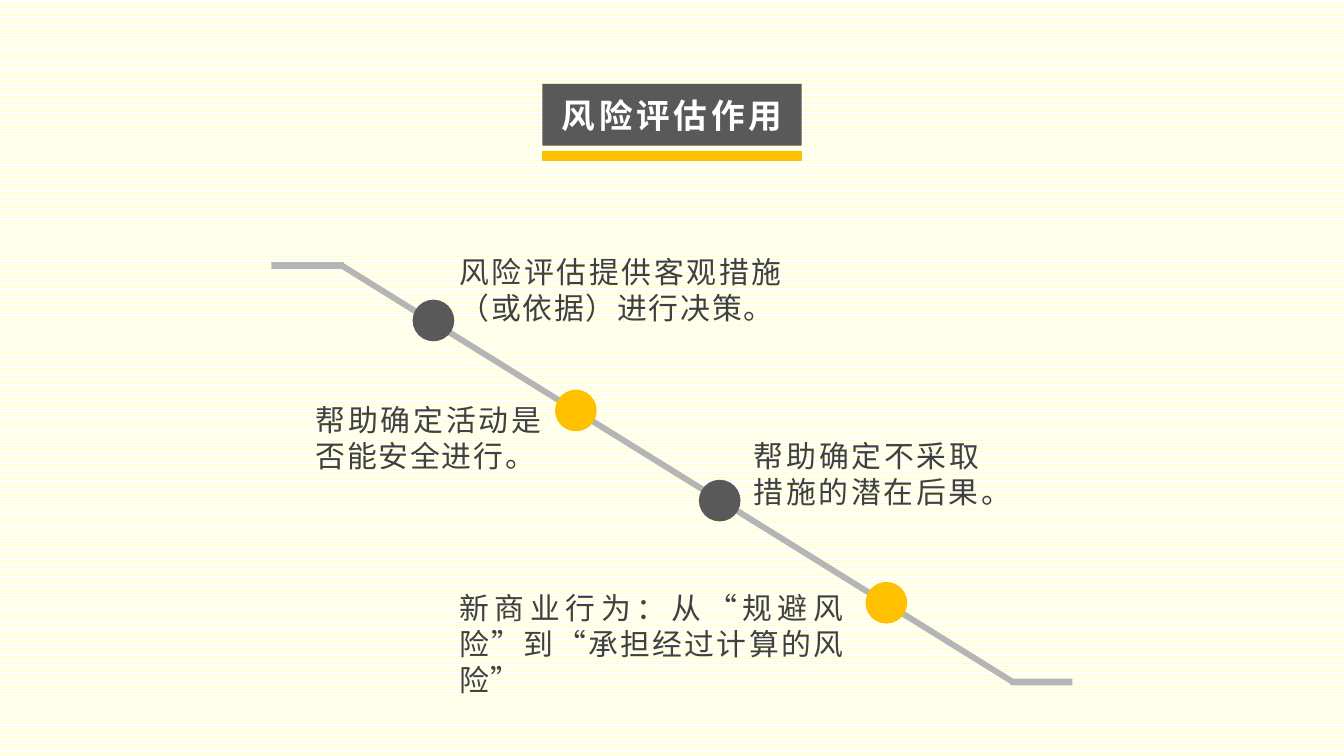
import pptx
import pptx.dml.color
import pptx.enum.dml
import pptx.enum.shapes
import pptx.enum.text
import pptx.oxml
import pptx.oxml.ns
import pptx.util

FONT = "Noto Sans CJK SC"
GREY, YELLOW, TRACK, INK, WHITE = "595959", "FFC000", "B5B5B6", "404040", "FFFFFF"
COLS, ROWS = 100, 56.25
DOT = 3.1
SHAPE = pptx.enum.shapes.MSO_SHAPE
ALIGN = pptx.enum.text.PP_ALIGN
ANCHOR = pptx.enum.text.MSO_ANCHOR


def rgb(value):
    return pptx.dml.color.RGBColor.from_string(value)


def write(tf, text, size=16, color=INK, bold=False, align=ALIGN.JUSTIFY, spacing=1):
    p = tf.paragraphs[0]
    p.alignment = align
    p.line_spacing = pptx.util.Pt(round(size * 1.2, 1))
    r = p.add_run()
    r.text = text
    r.font.size = pptx.util.Pt(size)
    r.font.bold = bold
    r.font.name = FONT
    r.font.color.rgb = rgb(color)
    rpr = r._r.get_or_add_rPr()
    rpr.set("spc", str(spacing * 100))
    ea = pptx.oxml.parse_xml(f'<a:ea {pptx.oxml.ns.nsdecls("a")} typeface="{FONT}"/>')
    rpr.find(pptx.oxml.ns.qn("a:latin")).addnext(ea)


class Deck:
    def __init__(self, width):
        self.prs = pptx.Presentation()
        self.prs.slide_width = pptx.util.Inches(width)
        self.prs.slide_height = pptx.util.Inches(width * 9 / 16)
        self.s = self.prs.slides.add_slide(self.prs.slide_layouts[6])

    def x(self, col):
        return round(self.prs.slide_width * col / COLS)

    def y(self, row):
        return round(self.prs.slide_height * row / ROWS)

    def box(self, col, row, cols, rows):
        return self.x(col), self.y(row), self.x(cols), self.y(rows)

    def background(self, fore, back):
        fill = self.s.background.fill
        fill.patterned()
        fill.pattern = pptx.enum.dml.MSO_PATTERN.LIGHT_HORIZONTAL
        fill.fore_color.rgb = rgb(fore)
        fill.back_color.rgb = rgb(back)

    def paint(self, sp, color):
        sp.shadow.inherit = False
        sp.fill.solid()
        sp.fill.fore_color.rgb = rgb(color)
        sp.line.fill.background()
        return sp

    def shape(self, kind, col, row, cols, rows, color):
        sp = self.s.shapes.add_shape(kind, *self.box(col, row, cols, rows))
        return self.paint(sp, color)

    def title(self, col, row, cols, rows, text):
        sp = self.shape(SHAPE.RECTANGLE, col, row, cols, rows, GREY)
        tf = sp.text_frame
        tf.word_wrap = False
        tf.vertical_anchor = ANCHOR.MIDDLE
        tf.margin_left = tf.margin_right = pptx.util.Inches(0.12)
        tf.margin_top = tf.margin_bottom = pptx.util.Inches(0.08)
        write(tf, text, size=18, color=WHITE, bold=True, align=ALIGN.CENTER, spacing=2)

    def rule(self, col, row, cols, color, width):
        sp = self.s.shapes.add_connector(
            pptx.enum.shapes.MSO_CONNECTOR.STRAIGHT,
            self.x(col), self.y(row), self.x(col + cols), self.y(row))
        sp.line.color.rgb = rgb(color)
        sp.line.width = pptx.util.Pt(width)
        effects = pptx.oxml.parse_xml(f'<a:effectLst {pptx.oxml.ns.nsdecls("a")}/>')
        sp._element.spPr.append(effects)

    def outline(self, points, color):
        start, *rest = [(self.x(col), self.y(row)) for col, row in points]
        builder = self.s.shapes.build_freeform(*start)
        builder.add_line_segments(rest, close=True)
        self.paint(builder.convert_to_shape(), color)

    def label(self, col, row, cols, rows, text):
        tf = self.s.shapes.add_textbox(*self.box(col, row, cols, rows)).text_frame
        tf.word_wrap = True
        write(tf, text)


def main():
    deck = Deck(10)
    deck.background("FFFFCC", WHITE)
    deck.title(40.35, 6.25, 19.3, 4.6, "风险评估作用")
    deck.rule(40.35, 11.62, 19.3, YELLOW, 5)

    deck.outline([(79.8, 51), (75.2, 51), (75.2, 50.9), (25.4, 20), (20.2, 20),
                  (20.2, 19.5), (25.6, 19.5), (25.6, 19.6), (75.4, 50.5),
                  (79.8, 50.5)], TRACK)

    dots = [(30.7, 22.3), (41.3, 29), (52, 35.7), (64.4, 43.3)]
    for i, (col, row) in enumerate(dots):
        deck.shape(SHAPE.OVAL, col, row, DOT, DOT, (GREY, YELLOW)[i % 2])

    labels = [
        (33.2, 18.4, 26.1, "风险评估提供客观措施（或依据）进行决策。"),
        (22.5, 29.4, 18.9, "帮助确定活动是否能安全进行。"),
        (55.1, 32.1, 18.9, "帮助确定不采取措施的潜在后果。"),
        (33.2, 43.4, 30.7, "新商业行为：从“规避风险”到“承担经过计算的风险”"),
    ]
    for col, row, cols, text in labels:
        deck.label(col, row, cols, 6.4, text)

    deck.prs.save("out.pptx")


if __name__ == "__main__":
    main()
